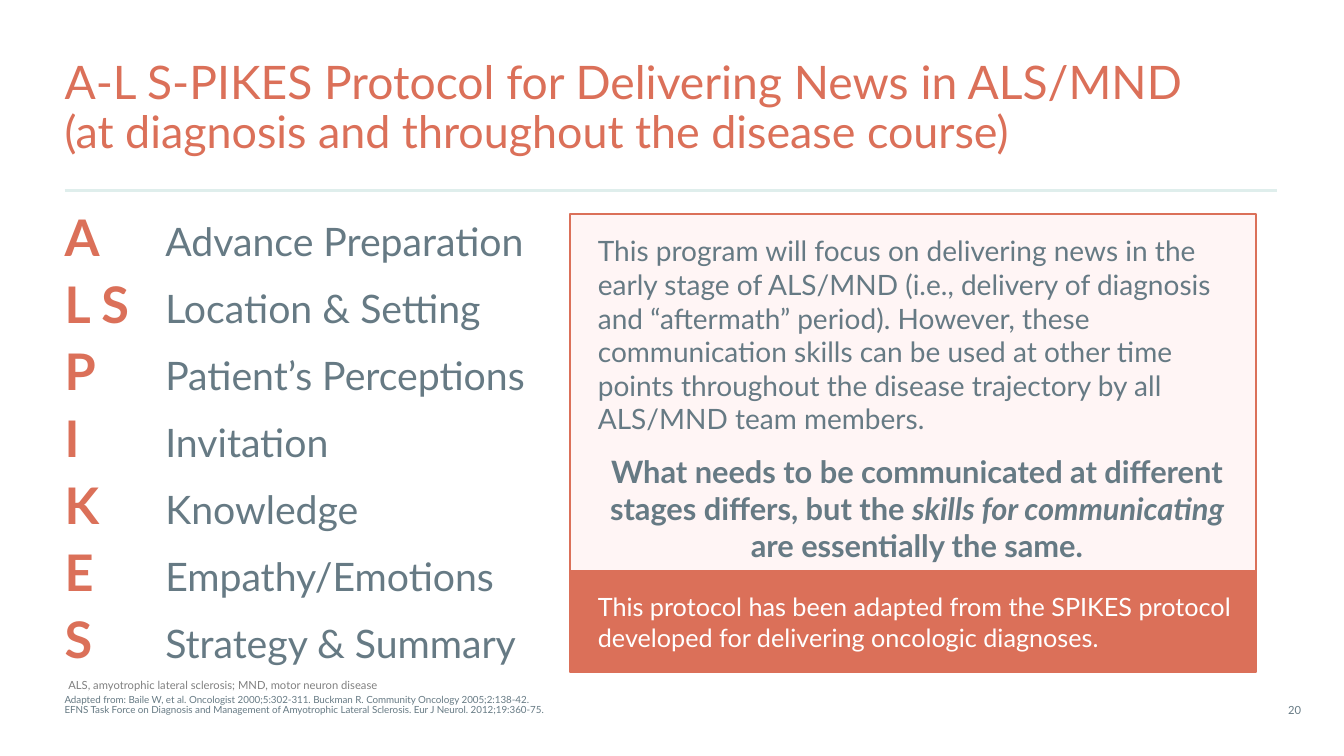
from pptx import Presentation
from pptx.dml.color import RGBColor
from pptx.enum.shapes import MSO_CONNECTOR, MSO_SHAPE
from pptx.enum.text import MSO_ANCHOR, MSO_AUTO_SIZE, PP_ALIGN
from pptx.oxml.ns import qn
from pptx.util import Inches, Pt
from lxml.etree import SubElement

CORAL = RGBColor(0xDB, 0x70, 0x59)
SLATE = RGBColor(0x66, 0x7A, 0x84)
BLUSH = RGBColor(0xFF, 0xF5, 0xF5)
MINT = RGBColor(0xDF, 0xEE, 0xEC)
GRAY = RGBColor(0x80, 0x80, 0x80)
WHITE = RGBColor(0xFF, 0xFF, 0xFF)

LEFT, WIDTH = 0.64, 12.03
STEPS = [
    ("A", "Advance Preparation"),
    ("L S", "Location & Setting"),
    ("P", "Patient’s Perceptions"),
    ("I", "Invitation"),
    ("K", "Knowledge"),
    ("E", "Empathy/Emotions"),
    ("S", "Strategy & Summary"),
]
FOCUS = (
    "This program will focus on delivering news in the early stage of ALS/MND "
    "(i.e., delivery of diagnosis and “aftermath” period). However, these "
    "communication skills can be used at other time points throughout the "
    "disease trajectory by all ALS/MND team members."
)
ADAPTED = (
    "This protocol has been adapted from the SPIKES protocol developed for "
    "delivering oncologic diagnoses."
)
REFERENCES = [
    "Adapted from: Baile W, et al. Oncologist 2000;5:302-311. "
    "Buckman R. Community Oncology 2005;2:138-42.",
    "EFNS Task Force on Diagnosis and Management of Amyotrophic Lateral "
    "Sclerosis. Eur J Neurol. 2012;19:360-75.",
]


def set_frame(tf, insets=(0, 0, 0, 0), **fmt):
    """Set the insets and layout of a text frame."""
    sides = ("margin_left", "margin_top", "margin_right", "margin_bottom")
    values = dict(word_wrap=True, auto_size=MSO_AUTO_SIZE.NONE,
                  vertical_anchor=MSO_ANCHOR.TOP)
    values.update(zip(sides, map(Inches, insets)))
    values.update(fmt)
    for name, value in values.items():
        setattr(tf, name, value)


def add_run(p, text, size, color, **fmt):
    """Append a formatted run to a paragraph."""
    r = p.add_run()
    r.text = text
    r.font.color.rgb = color
    for name, value in dict(name="Lato", size=Pt(size), **fmt).items():
        setattr(r.font, name, value)


def add_paragraph(tf, index, **fmt):
    """Return the paragraph at the index, with its format set."""
    p = tf.add_paragraph() if index else tf.paragraphs[0]
    for name, value in fmt.items():
        setattr(p, name, value)
    return p


def add_textbox(s, box, **fmt):
    """Add an empty text box and return its text frame."""
    tf = s.shapes.add_textbox(*map(Inches, box)).text_frame
    set_frame(tf, **fmt)
    return tf


def add_panel(s, box, fill):
    """Add a coral-outlined rectangle and return its text frame."""
    sp = s.shapes.add_shape(MSO_SHAPE.RECTANGLE, *map(Inches, box))
    sp.shadow.inherit = False
    sp.fill.solid()
    sp.fill.fore_color.rgb = fill
    sp.line.color.rgb = CORAL
    sp.line.width = Pt(1.5)
    set_frame(sp.text_frame, (0.28, 0.2, 0.2, 0.2))
    return sp.text_frame


def add_header(s, left, top, width):
    """Place the title and the rule below it."""
    sp = s.shapes.title
    box = dict(left=left, top=top, width=width, height=0.98)
    for name, value in box.items():
        setattr(sp, name, Inches(value))
    set_frame(sp.text_frame)
    p = add_paragraph(sp.text_frame, 0, alignment=PP_ALIGN.LEFT, line_spacing=0.9)
    add_run(p, "A-L S-PIKES Protocol for Delivering News in ALS/MND", 33, CORAL)
    p.add_line_break()
    add_run(p, "(at diagnosis and throughout the disease course)", 32, CORAL)
    y = top + 1.3
    rule = s.shapes.add_connector(
        MSO_CONNECTOR.STRAIGHT, *map(Inches, (left, y, left + width, y)))
    rule.line.color.rgb = MINT
    rule.line.width = Pt(1.5)
    SubElement(rule._element.spPr, qn("a:effectLst"))


def add_steps(s, box):
    """List the protocol letters with their meanings at a tab stop."""
    tf = add_textbox(s, box)
    for i, (letter, meaning) in enumerate(STEPS):
        p = add_paragraph(tf, i, line_spacing=0.9, space_before=Pt(9 if i else 0))
        tabs = SubElement(p._p.get_or_add_pPr(), qn("a:tabLst"))
        SubElement(tabs, qn("a:tab"), pos=str(Inches(1)), algn="l")
        add_run(p, letter, 36, CORAL, bold=True)
        add_run(p, "\t" + meaning, 28, SLATE)


def add_message(s, left, top, width):
    """Stack the focus panel and the source panel."""
    tf = add_panel(s, (left, top, width, 3.7), BLUSH)
    p = add_paragraph(tf, 0, alignment=PP_ALIGN.LEFT, space_after=Pt(6))
    add_run(p, FOCUS, 20, SLATE)
    p = add_paragraph(tf, 1, alignment=PP_ALIGN.CENTER, space_before=Pt(6),
                      space_after=Pt(6))
    for text, italic in [
        ("What needs to be communicated at different stages differs, but the ", False),
        ("skills for communicating ", True),
        ("are essentially the same.", False),
    ]:
        add_run(p, text, 22, SLATE, bold=True, italic=italic)
    tf = add_panel(s, (left, top + 3.55, width, 1), CORAL)
    p = add_paragraph(tf, 0, alignment=PP_ALIGN.LEFT)
    add_run(p, ADAPTED, 18, WHITE)


def add_footer(s, left, top, width):
    """Place the abbreviations, the references and the slide number."""
    pad = (0.1, 0.05, 0.1, 0.05)
    tf = add_textbox(s, (left - 0.06, top, 6.66, 0.24), insets=pad)
    add_run(tf.paragraphs[0],
            "ALS, amyotrophic lateral sclerosis; MND, motor neuron disease", 8, GRAY)
    tf = add_textbox(s, (left, top + 0.21, 11.13, 0.21),
                     vertical_anchor=MSO_ANCHOR.BOTTOM)
    for i, reference in enumerate(REFERENCES):
        add_run(add_paragraph(tf, i, line_spacing=0.9), reference, 7, SLATE)
    tf = add_textbox(s, (left + width, top + 0.25, 0.34, 0.24), insets=pad,
                     word_wrap=False)
    add_run(add_paragraph(tf, 0, alignment=PP_ALIGN.CENTER), "20", 8, SLATE)


def main():
    """Build the protocol slide and save it."""
    prs = Presentation()
    prs.slide_width, prs.slide_height = Inches(13.33), Inches(7.5)
    s = prs.slides.add_slide(prs.slide_layouts[5])
    add_header(s, LEFT, 0.59, WIDTH)
    add_steps(s, (LEFT, 2.11, 4.9, 4.55))
    add_message(s, 5.65, 2.12, 6.81)
    add_footer(s, LEFT, 6.68, WIDTH)
    prs.save("out.pptx")


if __name__ == "__main__":
    main()
